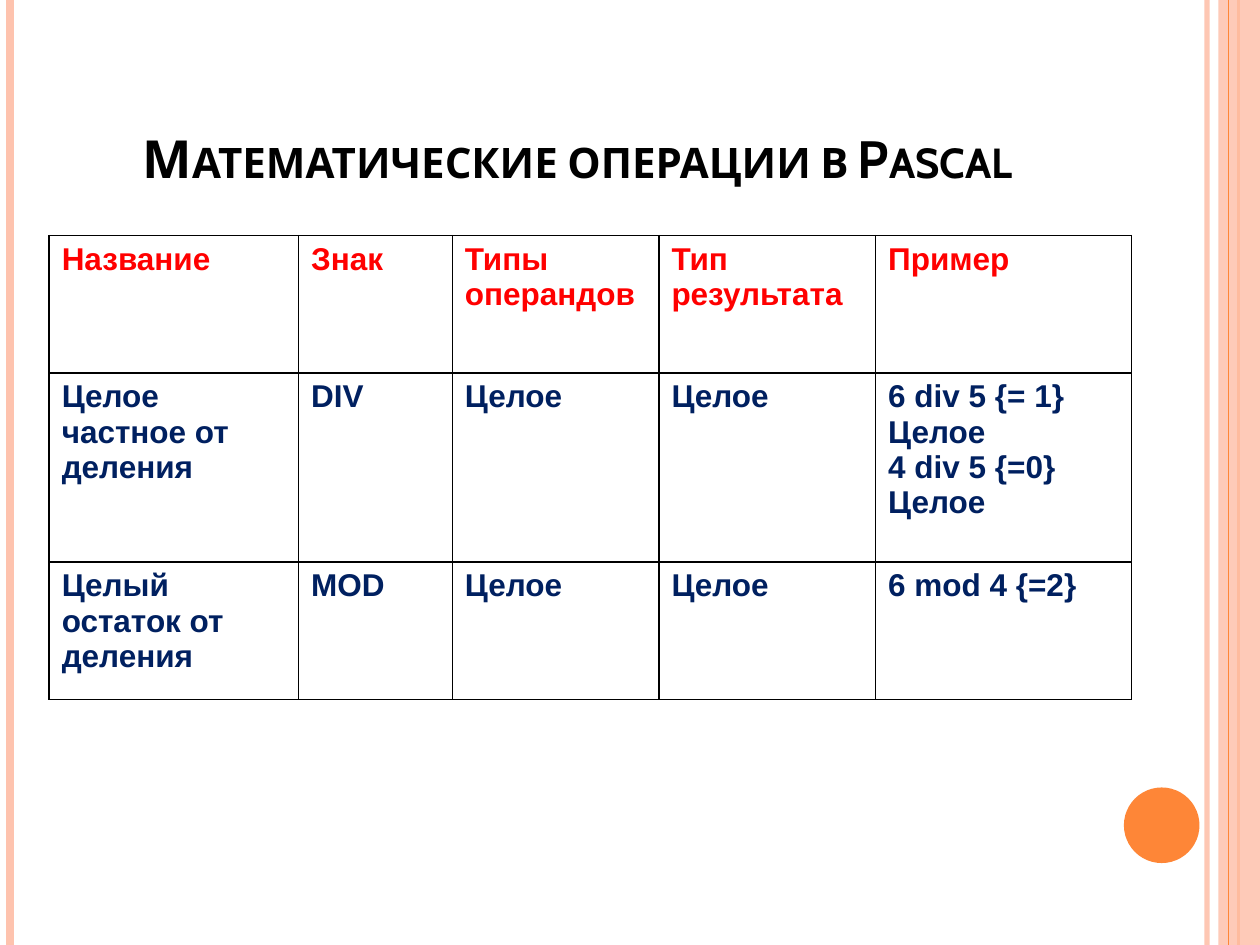
from lxml.etree import SubElement
from pptx import Presentation
from pptx.dml.color import RGBColor
from pptx.enum.shapes import MSO_CONNECTOR, MSO_SHAPE
from pptx.enum.text import MSO_ANCHOR, PP_ALIGN
from pptx.oxml.ns import qn
from pptx.util import Inches, Pt

HEADING = "Математические операции в Pascal"
OPERATIONS = [
    ["Название", "Знак", "Типы операндов", "Тип результата", "Пример"],
    ["Целое частное от деления", "DIV", "Целое", "Целое",
     "6 div 5 {= 1}\nЦелое\n4 div 5 {=0}\nЦелое"],
    ["Целый остаток от деления", "MOD", "Целое", "Целое", "6 mod 4 {=2}"],
]
COLUMN_WIDTHS = [1.98, 1.22, 1.64, 1.72, 2.03]
ROW_HEIGHTS = [1.09, 1.5, 1.09]
THEME = {
    "peach": "FEC3AE", "orange": "FE8637", "black": "000000",
    "header": "FF0000", "body": "002060",
    "title_font": "Cabin", "table_font": "Arial",
    "title_size": 30, "table_size": 18, "border": 1,
}
LEFT_RAILS = [(9.58, "peach", 3, 93), (0.08, "peach", 4.5, 100), (9.83, "orange", 1.5, 100)]
RIGHT_RAILS = [(9.75, "orange", 0.75, 100)]
SLIDE_WIDTH, SLIDE_HEIGHT = 10, 7.5


def color(key):
    return RGBColor.from_string(THEME[key])


def set_alpha(owner, percent):
    if percent < 100:
        rgb = next(owner.iter(qn("a:srgbClr")))
        SubElement(rgb, qn("a:alpha"), val=str(percent * 1000))


def add_rail(slide, x, key, weight, alpha):
    rail = slide.shapes.add_connector(
        MSO_CONNECTOR.STRAIGHT, Inches(x), 0, Inches(x), Inches(SLIDE_HEIGHT))
    rail.line.color.rgb = color(key)
    rail.line.width = Pt(weight)
    properties = rail._element.spPr
    set_alpha(properties, alpha)
    SubElement(properties, qn("a:effectLst"))


def add_plain(slide, kind, box, key, alpha=100):
    plain = slide.shapes.add_shape(kind, *map(Inches, box))
    plain.shadow.inherit = False
    plain.fill.solid()
    plain.fill.fore_color.rgb = color(key)
    plain.line.fill.background()
    set_alpha(plain._element.spPr, alpha)


def write(paragraph, text, font_key, size_key, color_key):
    run = paragraph.add_run()
    run.text = text
    run.font.name = THEME[font_key]
    run.font.size = Pt(THEME[size_key])
    run.font.bold = True
    run.font.color.rgb = color(color_key)
    return run


def add_borders(cell):
    properties = cell._tc.get_or_add_tcPr()
    for index, side in enumerate(("lnL", "lnR", "lnT", "lnB")):
        border = properties.makeelement(qn(f"a:{side}"), w=str(Pt(THEME["border"])))
        fill = SubElement(border, qn("a:solidFill"))
        SubElement(fill, qn("a:srgbClr"), val=THEME["black"])
        properties.insert(index, border)


def add_heading(slide):
    title = slide.shapes.title
    title.left, title.top, title.width, title.height = map(Inches, (0.5, 0.3, 8.17, 1.25))
    title.text_frame.vertical_anchor = MSO_ANCHOR.BOTTOM
    paragraph = title.text_frame.paragraphs[0]
    paragraph.alignment = PP_ALIGN.CENTER
    run = write(paragraph, HEADING, "title_font", "title_size", "black")
    run.font._element.set("cap", "small")


def add_operations(slide):
    table = slide.shapes.add_table(
        len(OPERATIONS), len(COLUMN_WIDTHS), Inches(0.39), Inches(1.87),
        Inches(sum(COLUMN_WIDTHS)), Inches(sum(ROW_HEIGHTS))).table
    table.horz_banding = False
    for column, width in zip(table.columns, COLUMN_WIDTHS):
        column.width = Inches(width)
    for row, height, entries in zip(table.rows, ROW_HEIGHTS, OPERATIONS):
        row.height = Inches(height)
        color_key = "header" if entries is OPERATIONS[0] else "body"
        for cell, entry in zip(row.cells, entries):
            cell.fill.background()
            add_borders(cell)
            frame = cell.text_frame
            for index, text in enumerate(entry.split("\n")):
                paragraph = frame.add_paragraph() if index else frame.paragraphs[0]
                write(paragraph, text, "table_font", "table_size", color_key)


def main():
    deck = Presentation()
    deck.slide_width, deck.slide_height = Inches(SLIDE_WIDTH), Inches(SLIDE_HEIGHT)
    slide = deck.slides.add_slide(deck.slide_layouts[5])
    for rail in LEFT_RAILS:
        add_rail(slide, *rail)
    add_plain(slide, MSO_SHAPE.RECTANGLE, (9.67, 0, 0.33, SLIDE_HEIGHT), "peach", 87)
    for rail in RIGHT_RAILS:
        add_rail(slide, *rail)
    add_plain(slide, MSO_SHAPE.OVAL, (8.92, 6.25, 0.6, 0.6), "orange")
    add_heading(slide)
    add_operations(slide)
    deck.save("out.pptx")


if __name__ == "__main__":
    main()
